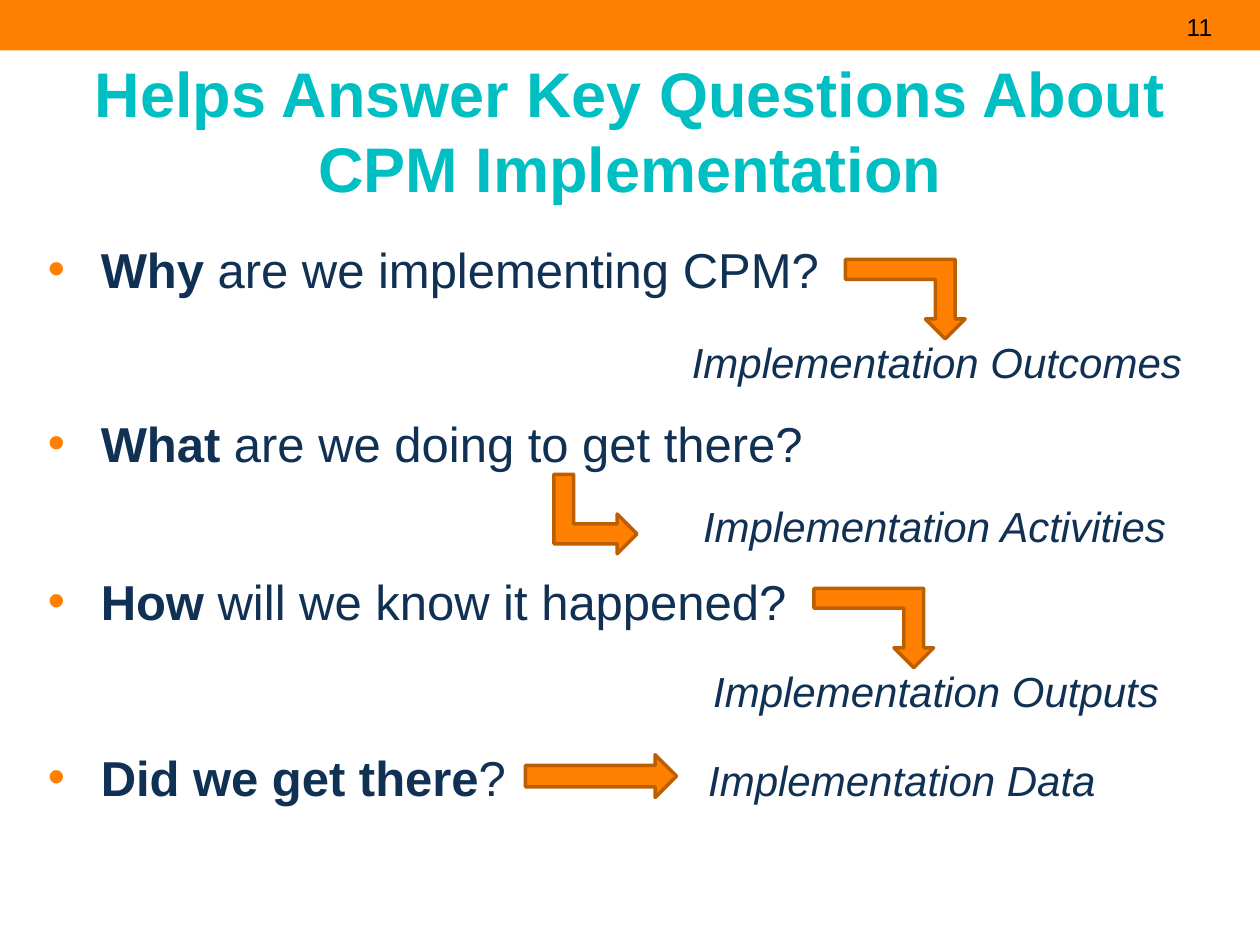
from lxml import etree
from pptx import Presentation
from pptx.dml.color import RGBColor
from pptx.enum.shapes import MSO_SHAPE
from pptx.enum.text import MSO_ANCHOR, MSO_AUTO_SIZE, PP_ALIGN
from pptx.oxml.ns import qn
from pptx.util import Inches, Pt

BENT_ARROW = MSO_SHAPE.BENT_UP_ARROW
RIGHT_ARROW = MSO_SHAPE.RIGHT_ARROW
BAR = MSO_SHAPE.RECTANGLE
COLORS = {"orange": "FF7F01", "outline": "BD5E01", "teal": "00BFC3",
          "navy": "103154", "black": "000000"}
FONT = "Arial"
WIDTH, HEIGHT = 10, 7.5
QUESTION_SIZE, ANSWER_SIZE = 28, 24
QUESTION_INDENT, HANGING = 0.5, 0.42

# Bold lead, rest of question, space before, answer, answer indent, space before answer
QUESTIONS = [
    ("Why", " are we implementing CPM?", 0, "Implementation Outcomes", 5.19, 22),
    ("What", " are we doing to get there?", 15, "Implementation Activities", 5.28, 16),
    ("How", " will we know it happened?", 12, "Implementation Outputs", 5.36, 20),
]
LAST_QUESTION = ("Did we get there", "?", 18)
LAST_ANSWER, LAST_ANSWER_TAB = "Implementation Data", 5.32

# Preset, box, rotation, flipped upside down
ARROWS = [
    (BENT_ARROW, (4.41, 3.75, 0.63, 0.66), 90, False),
    (BENT_ARROW, (6.71, 2.06, 0.95, 0.63), 0, True),
    (RIGHT_ARROW, (4.17, 5.99, 1.2, 0.34), 0, False),
    (BENT_ARROW, (6.46, 4.67, 0.95, 0.63), 0, True),
]


def color(name):
    return RGBColor.from_string(COLORS[name])


def place(shape, box):
    shape.left, shape.top, shape.width, shape.height = map(Inches, box)


def set_font(font, size, color_name):
    font.name, font.size = FONT, Pt(size)
    font.color.rgb = color(color_name)


def prepare_frame(frame, anchor):
    frame.word_wrap = True
    frame.auto_size = MSO_AUTO_SIZE.NONE
    frame.vertical_anchor = anchor
    frame.margin_left = frame.margin_right = Inches(0.1)
    frame.margin_top = frame.margin_bottom = Inches(0.1)


def add_run(paragraph, text, bold=False, italic=False):
    run = paragraph.add_run()
    run.text = text
    run.font.bold, run.font.italic = bold, italic
    return run


def set_indent(paragraph, left, first=0, bullet=False, tab=None):
    """Set margins, an optional orange bullet and an optional tab stop, in inches."""
    properties = paragraph._p.get_or_add_pPr()
    properties.set("marL", str(Inches(left)))
    properties.set("indent", str(Inches(first)))
    if bullet:
        bullet_color = etree.SubElement(properties, qn("a:buClr"))
        etree.SubElement(bullet_color, qn("a:srgbClr"), val=COLORS["orange"])
        etree.SubElement(properties, qn("a:buFont"), typeface=FONT)
        etree.SubElement(properties, qn("a:buChar"), char="•")
    else:
        etree.SubElement(properties, qn("a:buNone"))
    if tab:
        tabs = etree.SubElement(properties, qn("a:tabLst"))
        etree.SubElement(tabs, qn("a:tab"), pos=str(Inches(tab)), algn="l")


def add_question(paragraph, lead, rest, before, tab=None):
    set_indent(paragraph, QUESTION_INDENT, -HANGING, bullet=True, tab=tab)
    paragraph.space_before = Pt(before)
    set_font(paragraph.font, QUESTION_SIZE, "navy")
    add_run(paragraph, lead, bold=True)
    add_run(paragraph, rest)


def add_answer(paragraph, text, indent, before):
    set_indent(paragraph, indent)
    paragraph.space_before = Pt(before)
    set_font(paragraph.font, ANSWER_SIZE, "navy")
    add_run(paragraph, text, italic=True)


def fill_title(title, box):
    place(title, box)
    prepare_frame(title.text_frame, MSO_ANCHOR.MIDDLE)
    title.text_frame.text = "Helps Answer Key Questions About CPM Implementation"
    paragraph = title.text_frame.paragraphs[0]
    paragraph.alignment = PP_ALIGN.CENTER
    set_font(paragraph.font, 36, "teal")
    paragraph.font.bold = True


def fill_questions(body, box):
    place(body, box)
    frame = body.text_frame
    prepare_frame(frame, MSO_ANCHOR.TOP)
    paragraph = frame.paragraphs[0]
    for lead, rest, before, answer, indent, answer_before in QUESTIONS:
        add_question(paragraph, lead, rest, before)
        add_answer(frame.add_paragraph(), answer, indent, answer_before)
        paragraph = frame.add_paragraph()
    add_question(paragraph, *LAST_QUESTION, tab=LAST_ANSWER_TAB)
    answer_run = add_run(paragraph, "\t" + LAST_ANSWER, italic=True)
    answer_run.font.size = Pt(ANSWER_SIZE)


def add_filled(slide, preset, box):
    shape = slide.shapes.add_shape(preset, *map(Inches, box))
    shape.shadow.inherit = False
    shape.fill.solid()
    shape.fill.fore_color.rgb = color("orange")
    return shape


def add_header(slide, box):
    left, top, width, height = box
    add_filled(slide, BAR, box).line.fill.background()
    number = slide.shapes.add_textbox(
        *map(Inches, (left + 0.932 * width, top + 0.05, 0.42, height - 0.06)))
    number.text_frame.word_wrap = False
    number.text_frame.text = "11"
    set_font(number.text_frame.paragraphs[0].font, 14, "black")


def add_arrow(slide, preset, box, rotation, flipped):
    arrow = add_filled(slide, preset, box)
    arrow.line.color.rgb = color("outline")
    arrow.line.width = Pt(2)
    arrow.rotation = rotation
    if flipped:
        arrow._element.spPr.find(qn("a:xfrm")).set("flipV", "1")


def main():
    deck = Presentation()
    deck.slide_width, deck.slide_height = Inches(WIDTH), Inches(HEIGHT)
    slide = deck.slides.add_slide(deck.slide_layouts[1])
    add_header(slide, (0, 0, WIDTH, 0.4))
    fill_title(slide.shapes.title, (0.5, 0.49, 9, 1.08))
    fill_questions(slide.placeholders[1], (0.2, 1.8, 9.8, 5.01))
    for arrow in ARROWS:
        add_arrow(slide, *arrow)
    deck.save("out.pptx")


if __name__ == "__main__":
    main()
